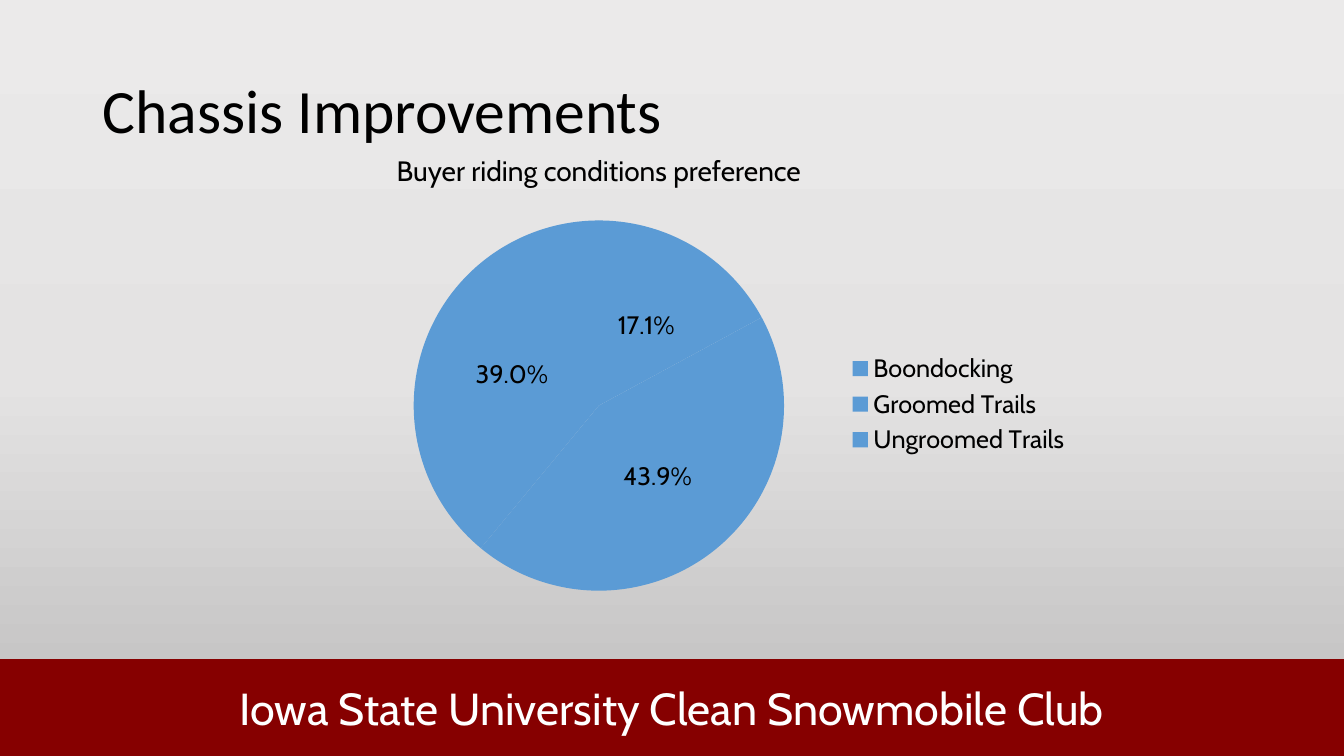
from copy import deepcopy

from pptx import Presentation
from pptx import util as u
from pptx.chart.data import CategoryChartData
from pptx.dml.color import RGBColor
from pptx.enum import chart as ch, shapes, text
from pptx.oxml import parse_xml
from pptx.oxml.ns import nsdecls, qn

COLORS = {
    "bg_top": "EBEAEA", "bg_middle": "E4E3E3", "bg_bottom": "BDBCBC",
    "band": "860000", "white": "FFFFFF", "black": "000000", "slice": "5B9BD5",
}
PREFERENCES = {"Boondocking": 0.171, "Groomed Trails": 0.439, "Ungroomed Trails": 0.39}
PLOT_LAYOUT = {"x": 0.06, "y": 0.042, "w": 0.522, "h": 0.923}


def rgb(name):
    return RGBColor.from_string(COLORS[name])


def set_font(font, name, size, color):
    for key, value in {"name": name, "size": u.Pt(size)}.items():
        setattr(font, key, value)
    font.color.rgb = rgb(color)


def set_text(sp, words, font, size, color, **paragraph_format):
    tf = sp.text_frame
    tf.word_wrap = True
    p = tf.paragraphs[0]
    for key, value in paragraph_format.items():
        setattr(p, key, value)
    r = p.add_run()
    r.text = words
    set_font(r.font, font, size, color)
    return tf


def add_background(s):
    fill = s.background.fill
    fill.gradient()
    fill.gradient_angle = 270
    stop_list = s._element.find(".//" + qn("a:gsLst"))
    stop_list.append(deepcopy(stop_list[0]))
    stops = zip(fill.gradient_stops, ("bg_top", "bg_middle", "bg_bottom"))
    for i, (stop, color) in enumerate(stops):
        stop.position = i / 2
        stop.color.rgb = rgb(color)


def add_band(s, words, *box):
    sp = s.shapes.add_shape(shapes.MSO_SHAPE.RECTANGLE, *map(u.Inches, box))
    sp.shadow.inherit = False
    sp.fill.solid()
    sp.fill.fore_color.rgb = rgb("band")
    sp.line.fill.background()
    tf = set_text(sp, words, "Cabin", 32, "white", alignment=text.PP_ALIGN.CENTER)
    tf.vertical_anchor = text.MSO_ANCHOR.MIDDLE


def add_label(s, words, font, size, anchor, align, *box):
    sp = s.shapes.add_textbox(*map(u.Inches, box))
    tf = set_text(sp, words, font, size, "black", alignment=align, line_spacing=0.9)
    tf.vertical_anchor = anchor


def add_pie(s, values, *box):
    data = CategoryChartData(number_format="0.0%")
    data.categories = list(values)
    data.add_series("Series 1", list(values.values()))
    chart = s.shapes.add_chart(ch.XL_CHART_TYPE.PIE, *map(u.Inches, box), data).chart
    chart.has_title = False
    set_font(chart.font, "Cabin", 18, "black")

    # Legend
    chart.has_legend = True
    chart.legend.position = ch.XL_LEGEND_POSITION.RIGHT
    chart.legend.include_in_layout = False

    # Slices and their values
    plot = chart.plots[0]
    plot.vary_by_categories = True
    for i in range(len(values)):
        fill = plot.series[0].points[i].format.fill
        fill.solid()
        fill.fore_color.rgb = rgb("slice")
    labels = plot.series[0].data_labels
    label_format = {
        "show_value": True, "show_percentage": False, "number_format": "0.0%",
        "number_format_is_linked": False, "position": ch.XL_LABEL_POSITION.CENTER,
    }
    for key, value in label_format.items():
        setattr(labels, key, value)
    set_font(labels.font, "Cabin", 18, "black")

    # Fixed place of the pie within the chart
    modes = '<c:xMode val="edge"/><c:yMode val="edge"/>'
    sizes = "".join(f'<c:{k} val="{v}"/>' for k, v in PLOT_LAYOUT.items())
    layout = parse_xml(
        f'<c:layout {nsdecls("c")}><c:manualLayout><c:layoutTarget val="inner"/>'
        f"{modes}{sizes}</c:manualLayout></c:layout>")
    area = chart._chartSpace.chart.plotArea
    for old in area.findall(qn("c:layout")):
        area.remove(old)
    area.insert(0, layout)


def main():
    prs = Presentation()
    prs.slide_width, prs.slide_height = u.Inches(13.33), u.Inches(7.5)
    s = prs.slides.add_slide(prs.slide_layouts[6])
    anchor, align = text.MSO_ANCHOR, text.PP_ALIGN

    # Background and club band
    add_background(s)
    add_band(s, "Iowa State University Clean Snowmobile Club", 0, 6.54, 13.33, 0.96)

    # Title, chart and chart heading
    add_label(s, "Chassis Improvements", "Calibri", 44,
              anchor.MIDDLE, align.LEFT, 0.92, 0.4, 11.5, 1.45)
    add_pie(s, PREFERENCES, 3.68, 2.02, 7.04, 3.98)
    add_label(s, "Buyer riding conditions preference", "Cabin", 20,
              anchor.TOP, align.CENTER, 3.32, 1.51, 5.24, 0.66)

    prs.save("out.pptx")


if __name__ == "__main__":
    main()
